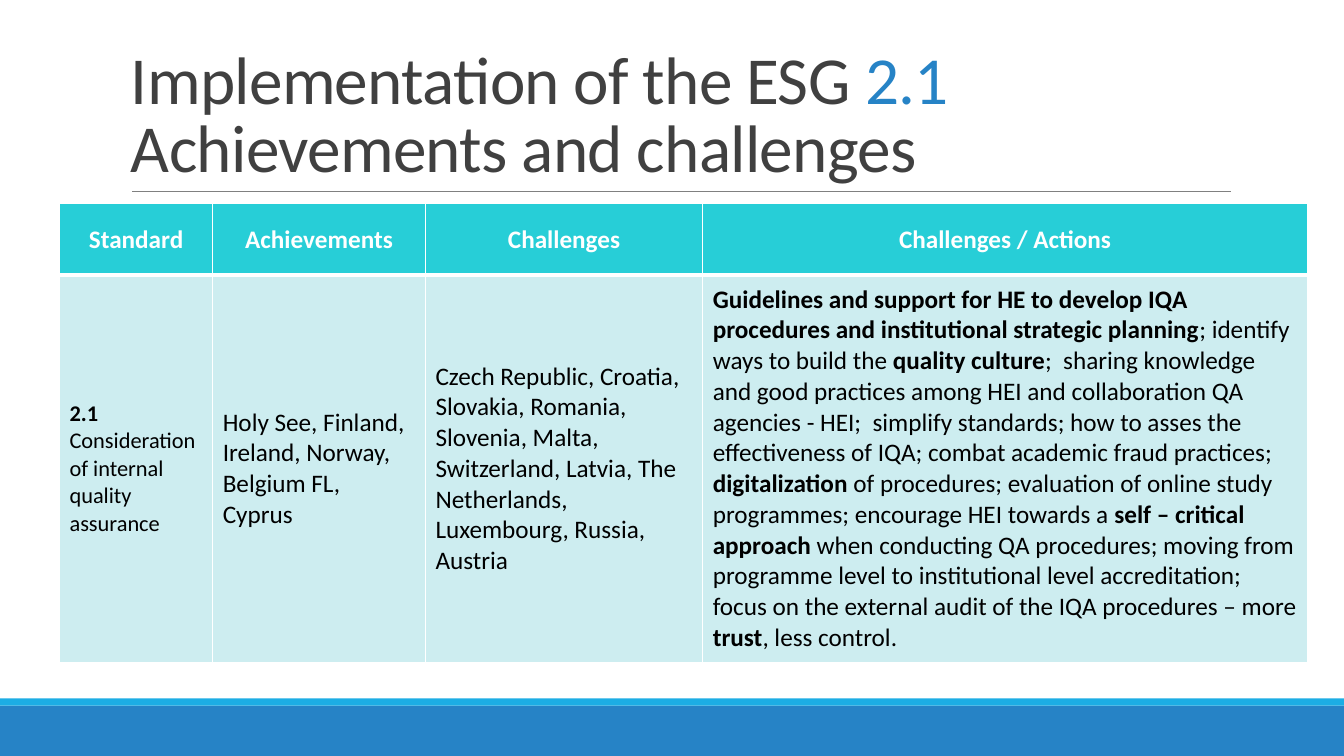
from dataclasses import dataclass

import lxml.etree
import pptx
import pptx.dml.color
import pptx.enum.shapes
import pptx.enum.text
import pptx.oxml.ns
import pptx.util

Inches = pptx.util.Inches
Pt = pptx.util.Pt
RGBColor = pptx.dml.color.RGBColor
qn = pptx.oxml.ns.qn
PP_ALIGN = pptx.enum.text.PP_ALIGN
MSO_ANCHOR = pptx.enum.text.MSO_ANCHOR

WHITE = RGBColor(0xFF, 0xFF, 0xFF)
BLACK = RGBColor(0, 0, 0)
BLUE = RGBColor(0x26, 0x83, 0xC6)
SKY = RGBColor(0x1C, 0xAD, 0xE4)
GREY = RGBColor(0x80, 0x80, 0x80)
CHARCOAL = RGBColor(0x40, 0x40, 0x40)
TURQUOISE = RGBColor(0x27, 0xCE, 0xD7)
PALE_TURQUOISE = RGBColor(0xCD, 0xED, 0xF0)
FONT = "Calibri"
PAGE_WIDTH = 13.33


@dataclass(frozen=True)
class Bar:
    top: float
    height: float
    color: RGBColor


@dataclass(frozen=True)
class Span:
    text: str
    bold: bool = False


@dataclass(frozen=True)
class Column:
    width: float
    heading: str
    body: tuple[Span, ...]
    body_size: int = 18


BARS = (Bar(7, 0.5, BLUE), Bar(6.93, 0.07, SKY))
TITLE = (
    ("Implementation of the ESG ", CHARCOAL),
    ("2.1", BLUE),
    (" Achievements and challenges", CHARCOAL),
)
ROW_HEIGHTS = (0.71, 3.84)
COLUMNS = (
    Column(1.52, "Standard", (
        Span("2.1", True),
        Span(" Consideration of internal quality assurance"),
    ), 16),
    Column(2.11, "Achievements", (
        Span("Holy See, Finland, Ireland, Norway, Belgium FL, Cyprus"),
    )),
    Column(2.75, "Challenges", (
        Span("Czech Republic, Croatia, Slovakia, Romania, Slovenia, Malta, "
             "Switzerland, Latvia, The Netherlands, Luxembourg, Russia, Austria"),
    )),
    Column(6, "Challenges / Actions", (
        Span("Guidelines and support for HE to develop IQA procedures and "
             "institutional strategic planning", True),
        Span("; identify ways to build the "),
        Span("quality culture", True),
        Span(";  sharing knowledge and good practices among HEI and collaboration "
             "QA agencies - HEI;  simplify standards; how to asses the effectiveness "
             "of IQA; combat academic fraud practices; "),
        Span("digitalization", True),
        Span(" of procedures; evaluation of online study programmes; "
             "encourage HEI towards a "),
        Span("self – critical approach ", True),
        Span("when conducting QA procedures; moving from programme level to "
             "institutional level accreditation; focus on the external audit of "
             "the IQA procedures – more "),
        Span("trust", True),
        Span(", less control."),
    )),
)


def draw_bar(page: pptx.slide.Slide, bar: Bar) -> None:
    shape = page.shapes.add_shape(
        pptx.enum.shapes.MSO_SHAPE.RECTANGLE,
        0, Inches(bar.top), Inches(PAGE_WIDTH), Inches(bar.height))
    shape.shadow.inherit = False
    shape.fill.solid()
    shape.fill.fore_color.rgb = bar.color
    shape.line.fill.background()


def draw_title_rule(page: pptx.slide.Slide) -> None:
    rule = page.shapes.add_connector(
        pptx.enum.shapes.MSO_CONNECTOR.STRAIGHT,
        Inches(1.31), Inches(1.9), Inches(12.21), Inches(1.9))
    rule.line.color.rgb = GREY
    rule.line.width = Pt(0.5)
    lxml.etree.SubElement(rule._element.spPr, qn("a:effectLst"))


def draw_title(page: pptx.slide.Slide) -> None:
    box = page.shapes.add_textbox(Inches(1.2), Inches(0.31), Inches(11), Inches(1.59))
    frame = box.text_frame
    frame.word_wrap = True
    frame.vertical_anchor = MSO_ANCHOR.BOTTOM
    para = frame.paragraphs[0]
    para.line_spacing = 0.85
    para.font.name = FONT
    para.font.size = Pt(48)
    for text, color in TITLE:
        run = para.add_run()
        run.text = text
        run.font.color.rgb = color
        run._r.get_or_add_rPr().set("spc", "-50")


def set_borders(cell: pptx.table._Cell, top: float, bottom: float) -> None:
    """Give the cell white edges, one point wide at the sides."""
    properties = cell._tc.get_or_add_tcPr()
    for edge, width in (("L", 1), ("R", 1), ("T", top), ("B", bottom)):
        line = lxml.etree.SubElement(properties, qn(f"a:ln{edge}"), w=str(Pt(width)))
        fill = lxml.etree.SubElement(line, qn("a:solidFill"))
        lxml.etree.SubElement(fill, qn("a:srgbClr"), val=str(WHITE))


def fill_cell(cell: pptx.table._Cell, spans: tuple[Span, ...], size: int,
              color: RGBColor, background: RGBColor, align: PP_ALIGN) -> None:
    cell.fill.solid()
    cell.fill.fore_color.rgb = background
    cell.vertical_anchor = MSO_ANCHOR.MIDDLE
    para = cell.text_frame.paragraphs[0]
    para.alignment = align
    para.font.name = FONT
    para.font.size = Pt(size)
    para.font.color.rgb = color
    for span in spans:
        run = para.add_run()
        run.text = span.text
        run.font.bold = span.bold


def draw_table(page: pptx.slide.Slide) -> None:
    table = page.shapes.add_table(
        len(ROW_HEIGHTS), len(COLUMNS), Inches(0.59), Inches(2.02),
        Inches(sum(column.width for column in COLUMNS)),
        Inches(sum(ROW_HEIGHTS))).table
    table.first_row = False
    table.horz_banding = False
    for row, height in zip(table.rows, ROW_HEIGHTS):
        row.height = Inches(height)
    for index, column in enumerate(COLUMNS):
        table.columns[index].width = Inches(column.width)
        heading, body = table.cell(0, index), table.cell(1, index)
        set_borders(heading, top=1, bottom=3)
        set_borders(body, top=3, bottom=1)
        fill_cell(heading, (Span(column.heading, True),), 18,
                  WHITE, TURQUOISE, PP_ALIGN.CENTER)
        fill_cell(body, column.body, column.body_size,
                  BLACK, PALE_TURQUOISE, PP_ALIGN.LEFT)


def main() -> None:
    deck = pptx.Presentation()
    deck.slide_width = Inches(PAGE_WIDTH)
    deck.slide_height = Inches(7.5)
    page = deck.slides.add_slide(deck.slide_layouts[6])
    for bar in BARS:
        draw_bar(page, bar)
    draw_title_rule(page)
    draw_title(page)
    draw_table(page)
    deck.save("out.pptx")


if __name__ == "__main__":
    main()
